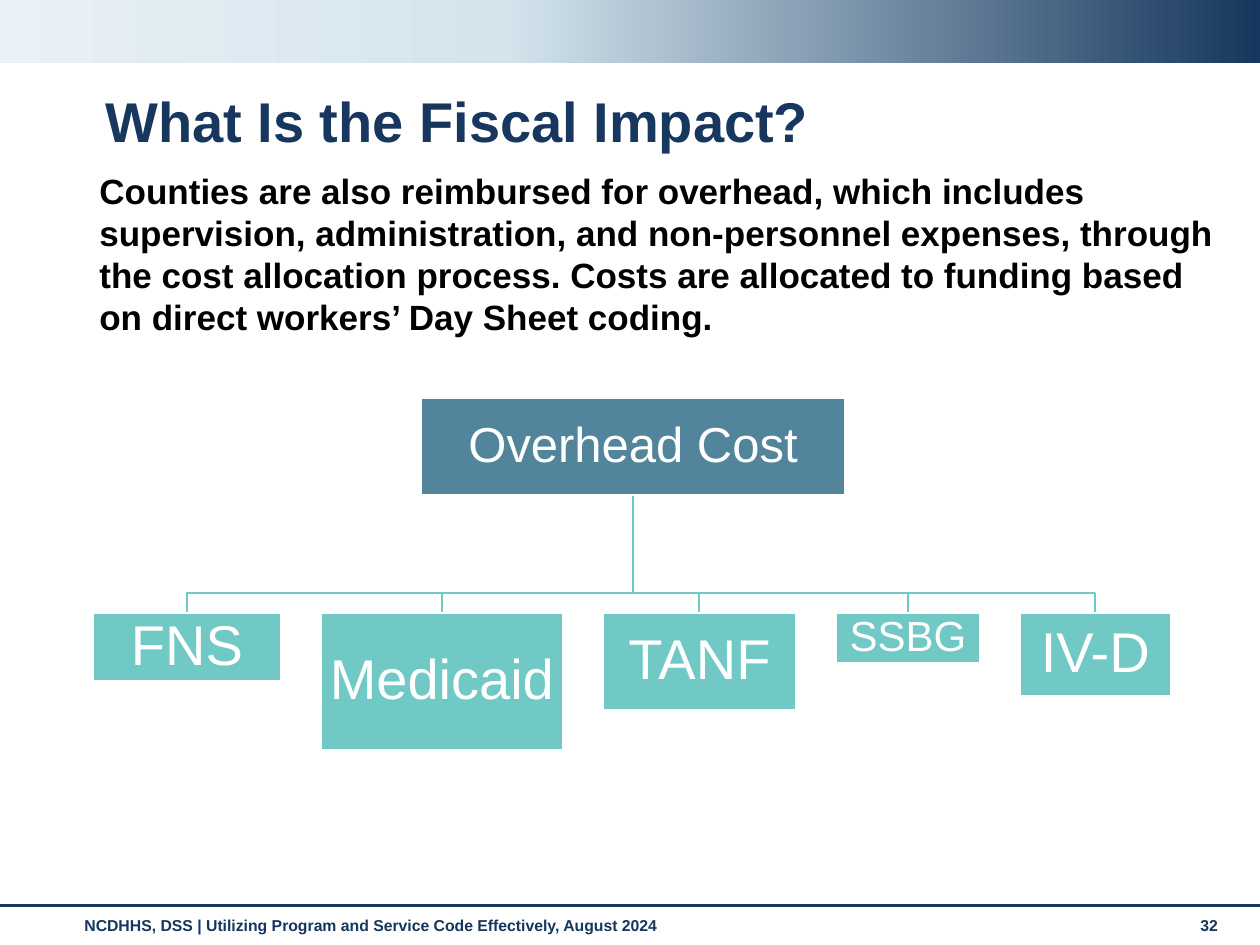
from copy import deepcopy
from dataclasses import dataclass

from pptx import Presentation
from pptx.dml.color import RGBColor
from pptx.enum.shapes import MSO_CONNECTOR, MSO_SHAPE
from pptx.enum.text import MSO_ANCHOR as Anchor, PP_ALIGN as Align
from pptx.oxml.ns import qn
from pptx.util import Emu, Pt
from lxml.etree import SubElement

SCALE = 914400 / 126  # EMU per px
NAVY, TEAL, STEEL, WHITE, BLACK = "17375E", "71C9C5", "52849C", "FFFFFF", "000000"
FOOTER_NAVY = "15365E"
BAND_STOPS = [(0, NAVY), (0.6, "D3E4ED"), (1, "E9F1F6")]


@dataclass
class Box:
    text: str
    w: int
    h: int
    size: int = 32
    fill: str = TEAL


@dataclass
class Label:
    text: str
    x: int
    y: int
    w: int
    h: int
    size: int
    color: str
    spacing: float | Pt | None = None
    anchor: Anchor = Anchor.TOP


def px(n: float) -> Emu:
    return Emu(round(n * SCALE))


def rgb(color: str) -> RGBColor:
    return RGBColor.from_string(color)


def set_text(s, text: str, size: int, color: str, bold: bool = False):
    tf = s.text_frame
    tf.word_wrap = True
    p = tf.paragraphs[0]
    p.text = text
    p.font.name, p.font.size, p.font.bold = "Arial", Pt(size), bold
    p.font.color.rgb = rgb(color)
    return tf, p


def add_label(slide, label: Label) -> None:
    s = slide.shapes.add_textbox(px(label.x), px(label.y), px(label.w), px(label.h))
    tf, p = set_text(s, label.text, label.size, label.color, bold=True)
    tf.vertical_anchor = label.anchor
    p.line_spacing = label.spacing


def add_box(slide, box: Box, x: int, y: int) -> None:
    s = slide.shapes.add_shape(MSO_SHAPE.RECTANGLE, px(x), px(y), px(box.w), px(box.h))
    s.shadow.inherit = False
    s.fill.solid()
    s.fill.fore_color.rgb = rgb(box.fill)
    s.line.color.rgb = rgb(WHITE)
    s.line.width = Pt(1)
    tf, p = set_text(s, box.text, box.size, WHITE)
    tf.margin_left = tf.margin_right = tf.margin_top = tf.margin_bottom = px(2)
    tf.vertical_anchor = Anchor.MIDDLE
    p.alignment = Align.CENTER
    p.line_spacing = 0.9


def add_branch(slide, x1: int, y1: int, bend: int, x2: int, y2: int) -> None:
    builder = slide.shapes.build_freeform(x1, y1, scale=SCALE)
    builder.add_line_segments([(x1, bend), (x2, bend), (x2, y2)], close=False)
    s = builder.convert_to_shape()
    s.shadow.inherit = False
    s.fill.background()
    s.line.color.rgb = rgb(TEAL)
    s.line.width = Pt(1)


def add_band(slide) -> None:
    s = slide.shapes.add_shape(MSO_SHAPE.RECTANGLE, 0, 0, px(1260), px(63))
    s.shadow.inherit = False
    s.line.fill.background()
    s.fill.gradient()
    s.fill.gradient_angle = 180
    stops = next(s._element.spPr.iter(qn("a:gsLst")))
    stops.append(deepcopy(stops[0]))
    for stop, (position, color) in zip(s.fill.gradient_stops, BAND_STOPS):
        stop.position = position
        stop.color.rgb = rgb(color)


def add_rule(slide, y: int) -> None:
    s = slide.shapes.add_connector(MSO_CONNECTOR.STRAIGHT, 0, px(y), px(1260), px(y))
    s.line.color.rgb = rgb(NAVY)
    s.line.width = Pt(1.75)
    SubElement(s._element.spPr, qn("a:effectLst"))


LABELS = [
    Label("NCDHHS, DSS | Utilizing Program and Service Code Effectively, August 2024",
          72, 910, 1101, 37, 9, FOOTER_NAVY),
    Label("32", 1188, 910, 55, 37, 9, FOOTER_NAVY),
    Label("What Is the Fiscal Impact?", 93, 86, 1081, 76, 32, NAVY, 0.9, Anchor.MIDDLE),
    Label("Counties are also reimbursed for overhead, which includes supervision, "
          "administration, and non-personnel expenses, through the cost allocation "
          "process. Costs are allocated to funding based on direct workers’ Day Sheet "
          "coding.", 87, 163, 1145, 660, 20, BLACK, Pt(24)),
]
ROOT = Box("Overhead Cost", 424, 97, 28, STEEL)
PROGRAMS = [
    Box("FNS", 188, 68),
    Box("Medicaid", 242, 137),
    Box("TANF", 193, 97),
    Box("SSBG", 144, 50, 24),
    Box("IV-D", 151, 83),
]
ROOT_X, ROOT_Y = 421, 398
ROW_X, ROW_Y, GAP, BEND_Y = 93, 613, 40, 593


def main() -> None:
    prs = Presentation()
    prs.slide_width, prs.slide_height = px(1260), px(945)
    slide = prs.slides.add_slide(prs.slide_layouts[6])

    # Header band, footer rule and text
    add_band(slide)
    add_rule(slide, 906)
    for label in LABELS:
        add_label(slide, label)

    # Left edges of the program row, evenly spaced
    lefts = [ROW_X + sum(b.w + GAP for b in PROGRAMS[:i]) for i in range(len(PROGRAMS))]

    # Branches lie behind the boxes
    for box, x in zip(PROGRAMS, lefts):
        add_branch(slide, ROOT_X + ROOT.w // 2, ROOT_Y + ROOT.h, BEND_Y,
                   x + box.w // 2, ROW_Y)

    # Overhead box and the programs it is allocated to
    add_box(slide, ROOT, ROOT_X, ROOT_Y)
    for box, x in zip(PROGRAMS, lefts):
        add_box(slide, box, x, ROW_Y)

    prs.save("out.pptx")


if __name__ == "__main__":
    main()
